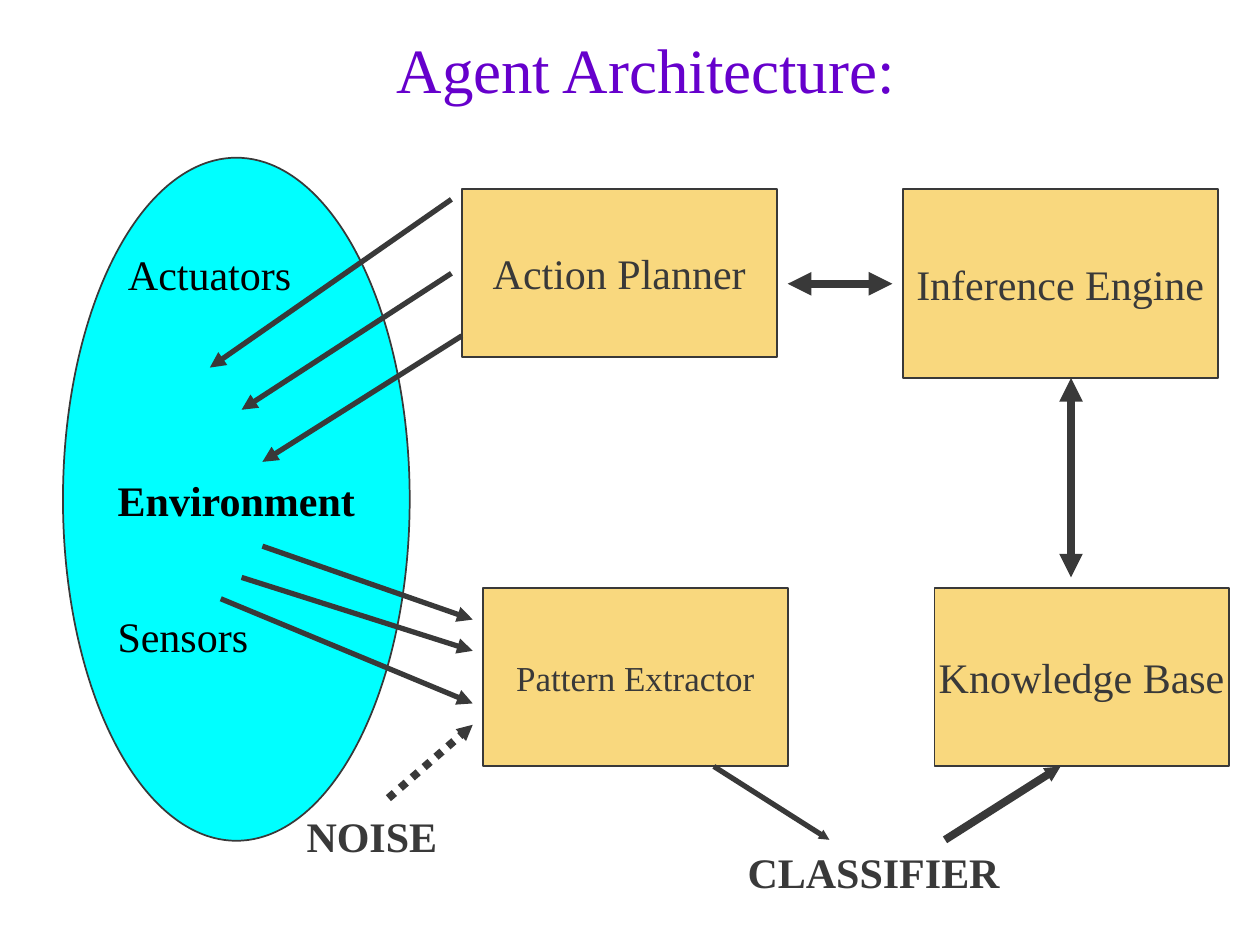
from dataclasses import dataclass

from lxml import etree
from pptx import Presentation
from pptx.dml.color import RGBColor
from pptx.enum.dml import MSO_LINE
from pptx.enum.shapes import MSO_CONNECTOR, MSO_SHAPE
from pptx.enum.text import MSO_ANCHOR, PP_ALIGN
from pptx.oxml.ns import qn
from pptx.slide import Slide
from pptx.text.text import TextFrame
from pptx.util import Cm, Pt

OVAL, RECTANGLE = MSO_SHAPE.OVAL, MSO_SHAPE.RECTANGLE
STRAIGHT = MSO_CONNECTOR.STRAIGHT
DOTTED = MSO_LINE.ROUND_DOT
MIDDLE, TOP = MSO_ANCHOR.MIDDLE, MSO_ANCHOR.TOP
CENTER, LEFT = PP_ALIGN.CENTER, PP_ALIGN.LEFT

FONT = "Times New Roman"
COLORS = {
    "title": "6600CC",
    "environment": "00FFFF",
    "component": "F9D87E",
    "ink": "393939",
    "black": "000000",
}
LABEL_HEIGHT = 1.27
THIN, THICK = 3, 4.5


@dataclass
class Node:
    text: str
    left: float
    top: float
    width: float
    height: float
    size: int = 24
    shape: MSO_SHAPE = RECTANGLE
    fill: str = "component"
    color: str = "ink"
    bold: bool = False


@dataclass
class Label:
    text: str
    left: float
    top: float
    width: float
    color: str
    bold: bool = False


@dataclass
class Arrow:
    start: tuple[float, float]
    end: tuple[float, float]
    weight: float = THIN
    both_ends: bool = False
    dotted: bool = False
    head_size: str = "med"


NODES = [
    Node("Environment", 1.27, 3.18, 6.99, 13.77, shape=OVAL,
         fill="environment", color="black", bold=True),
    Node("Action Planner", 9.31, 3.81, 6.35, 3.39),
    Node("Inference Engine", 18.2, 3.81, 6.35, 3.81),
    Node("Pattern Extractor", 9.74, 11.85, 6.14, 3.6, size=20),
    Node("Knowledge Base", 18.84, 11.85, 5.93, 3.6),
]

ARROWS = [
    Arrow((4.87, 11.64), (9.53, 13.12)),
    Arrow((4.45, 12.07), (9.53, 14.18)),
    Arrow((5.29, 11.01), (9.53, 12.49)),
    Arrow((7.83, 16.09), (9.53, 14.61), THICK, dotted=True, head_size="sm"),
    Arrow((14.39, 15.45), (16.72, 16.93), head_size="sm"),
    Arrow((19.05, 16.93), (21.38, 15.45), THICK, head_size="sm"),
    Arrow((21.59, 11.64), (21.59, 7.62), THICK, both_ends=True),
    Arrow((17.99, 5.72), (15.88, 5.72), THICK, both_ends=True),
    Arrow((9.1, 4.02), (4.23, 7.41)),
    Arrow((9.1, 5.51), (4.87, 8.26)),
    Arrow((9.31, 6.77), (5.29, 9.31)),
]

LABELS = [
    Label("NOISE", 5.93, 16.21, 3.6, "ink", bold=True),
    Label("CLASSIFIER", 14.82, 16.93, 5.59, "ink", bold=True),
    Label("Sensors", 2.12, 12.19, 4.65, "black"),
    Label("Actuators", 2.33, 4.88, 4.02, "black"),
]


def rgb(name: str) -> RGBColor:
    return RGBColor.from_string(COLORS[name])


def write_text(frame: TextFrame, text: str, size: int, color: str,
               bold: bool = False, align: PP_ALIGN = CENTER,
               anchor: MSO_ANCHOR = MIDDLE, wrap: bool = False) -> None:
    frame.text = text
    frame.word_wrap = wrap
    frame.vertical_anchor = anchor
    para = frame.paragraphs[0]
    para.alignment = align
    para.font.name = FONT
    para.font.size = Pt(size)
    para.font.bold = bold
    para.font.color.rgb = rgb(color)


def draw_title(page: Slide, text: str) -> None:
    title = page.shapes.title
    title.left, title.top = Cm(1.06), Cm(0)
    title.width, title.height = Cm(23.92), Cm(2.75)
    write_text(title.text_frame, text, 36, "title", wrap=True)


def draw_node(page: Slide, node: Node) -> None:
    box = page.shapes.add_shape(node.shape, Cm(node.left), Cm(node.top),
                                Cm(node.width), Cm(node.height))
    box.shadow.inherit = False
    box.fill.solid()
    box.fill.fore_color.rgb = rgb(node.fill)
    box.line.color.rgb = rgb("ink")
    box.line.width = Pt(1)
    write_text(box.text_frame, node.text, node.size, node.color, node.bold)


def draw_label(page: Slide, label: Label) -> None:
    box = page.shapes.add_textbox(Cm(label.left), Cm(label.top),
                                  Cm(label.width), Cm(LABEL_HEIGHT))
    write_text(box.text_frame, label.text, 24, label.color, label.bold,
               align=LEFT, anchor=TOP, wrap=True)


def draw_arrow(page: Slide, arrow: Arrow) -> None:
    connector = page.shapes.add_connector(
        STRAIGHT, *map(Cm, arrow.start), *map(Cm, arrow.end))
    connector.line.color.rgb = rgb("ink")
    connector.line.width = Pt(arrow.weight)
    if arrow.dotted:
        connector.line.dash_style = DOTTED
    properties = connector.line._get_or_add_ln()
    ends = ("a:headEnd", "a:tailEnd") if arrow.both_ends else ("a:tailEnd",)
    for end in ends:
        etree.SubElement(properties, qn(end), type="triangle",
                         w=arrow.head_size, len=arrow.head_size)
    etree.SubElement(connector._element.spPr, qn("a:effectLst"))


def main() -> None:
    deck = Presentation()
    deck.slide_width, deck.slide_height = Cm(25.4), Cm(19.05)
    page = deck.slides.add_slide(deck.slide_layouts[5])
    draw_title(page, "Agent Architecture:")
    for node in NODES:
        draw_node(page, node)
    for arrow in ARROWS:
        draw_arrow(page, arrow)
    for label in LABELS:
        draw_label(page, label)
    deck.save("out.pptx")


if __name__ == "__main__":
    main()
